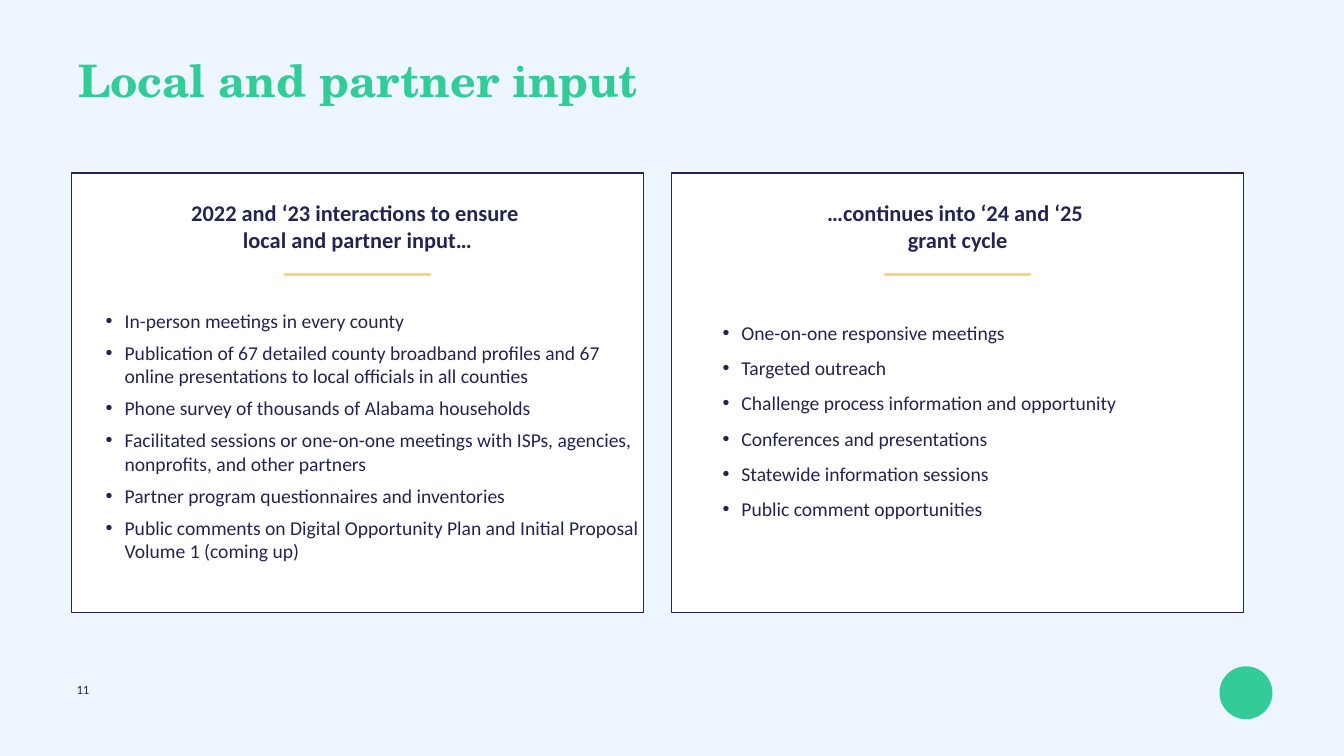
"""Build the local and partner input slide."""
from dataclasses import dataclass
from typing import Optional

from lxml.etree import SubElement
from pptx import Presentation
from pptx.dml.color import RGBColor
from pptx.enum.shapes import MSO_CONNECTOR as CONN, MSO_SHAPE as SHAPE
from pptx.enum.text import PP_ALIGN as ALIGN
from pptx.oxml.ns import qn
from pptx.util import Pt

NAVY, GREEN, GOLD, WHITE, PALE = "242451", "33CC99", "F8D57C", "FFFFFF", "EDF5FF"
PANEL_TOP, PANEL_W, PANEL_H = 246.96, 817.2, 627.84
RULE_Y, RULE_W = 392.4, 206.64
INDENT = 27


@dataclass
class Style:
    size: float
    color: str = NAVY
    font: str = "Calibri"
    bold: bool = False
    align: Optional[ALIGN] = None
    line_spacing: Optional[float] = None
    space_after: Optional[float] = None
    bullet: bool = False


@dataclass
class Panel:
    left: float
    heading: list[str]
    items: list[str]
    list_left: float
    list_w: float
    list_h: float
    list_style: Style


TITLE = Style(64, GREEN, "TeX Gyre Schola", bold=True, line_spacing=0.9)
NUMBER = Style(18, line_spacing=0.9)
HEADING = Style(32, bold=True, align=ALIGN.CENTER)

PANELS = [
    Panel(102.24, ["2022 and ‘23 interactions to ensure ", "local and partner input…"], [
        "In-person meetings in every county",
        "Publication of 67 detailed county broadband profiles and 67 online "
        "presentations to local officials in all counties",
        "Phone survey of thousands of Alabama households",
        "Facilitated sessions or one-on-one meetings with ISPs, agencies, "
        "nonprofits, and other partners",
        "Partner program questionnaires and inventories",
        "Public comments on Digital Opportunity Plan and Initial Proposal "
        "Volume 1 (coming up)",
    ], 144, 775.44, 419.04, Style(28, space_after=12, bullet=True)),
    Panel(959.76, ["…continues into ‘24 and ‘25 ", "grant cycle"], [
        "One-on-one responsive meetings",
        "Targeted outreach",
        "Challenge process information and opportunity",
        "Conferences and presentations",
        "Statewide information sessions",
        "Public comment opportunities",
    ], 1025.28, 712.08, 313.2, Style(28, line_spacing=1.5, bullet=True)),
]


def rgb(value: str) -> RGBColor:
    return RGBColor.from_string(value)


def add_block(slide, kind: SHAPE, x: float, y: float, w: float, h: float,
              fill: str, line: Optional[str] = None) -> None:
    sp = slide.shapes.add_shape(kind, Pt(x), Pt(y), Pt(w), Pt(h))
    sp.shadow.inherit = False
    sp.fill.solid()
    sp.fill.fore_color.rgb = rgb(fill)
    if line:
        sp.line.color.rgb = rgb(line)
        sp.line.width = Pt(2)
    else:
        sp.line.fill.background()


def add_bullet(p) -> None:
    pPr = p._p.get_or_add_pPr()
    pPr.set("marL", str(Pt(INDENT)))
    pPr.set("indent", str(-Pt(INDENT)))
    color = SubElement(pPr, qn("a:buClr"))
    SubElement(color, qn("a:srgbClr"), val=NAVY)
    SubElement(pPr, qn("a:buFont"), typeface="Arial")
    SubElement(pPr, qn("a:buChar"), char="•")


def add_text(slide, x: float, y: float, w: float, h: float,
             lines: list[str], style: Style) -> None:
    tf = slide.shapes.add_textbox(Pt(x), Pt(y), Pt(w), Pt(h)).text_frame
    tf.word_wrap = True
    for i, line in enumerate(lines):
        p = tf.add_paragraph() if i else tf.paragraphs[0]
        if style.bullet:
            add_bullet(p)
        p.alignment = style.align
        p.line_spacing = style.line_spacing
        if style.space_after is not None:
            p.space_after = Pt(style.space_after)
        r = p.add_run()
        r.text = line
        r.font.size = Pt(style.size)
        r.font.name = style.font
        r.font.bold = style.bold
        r.font.color.rgb = rgb(style.color)


def add_rule(slide, x: float, y: float, w: float) -> None:
    cxn = slide.shapes.add_connector(CONN.STRAIGHT, Pt(x), Pt(y), Pt(x + w), Pt(y))
    cxn.line.color.rgb = rgb(GOLD)
    cxn.line.width = Pt(5)
    cxn.line._get_or_add_ln().set("cap", "rnd")
    SubElement(cxn._element.spPr, qn("a:effectLst"))


def add_panel(slide, panel: Panel) -> None:
    add_block(slide, SHAPE.RECTANGLE, panel.left, PANEL_TOP, PANEL_W, PANEL_H, WHITE, NAVY)
    add_text(slide, panel.left, 280.8, PANEL_W, 123.12, panel.heading, HEADING)
    add_rule(slide, panel.left + (PANEL_W - RULE_W) / 2, RULE_Y, RULE_W)
    add_text(slide, panel.list_left, 437.76, panel.list_w, panel.list_h,
             panel.items, panel.list_style)


def main() -> None:
    prs = Presentation()
    prs.slide_width, prs.slide_height = Pt(1920.24), Pt(1080)
    slide = prs.slides.add_slide(prs.slide_layouts[6])
    slide.background.fill.solid()
    slide.background.fill.fore_color.rgb = rgb(PALE)
    add_block(slide, SHAPE.OVAL, 1742.4, 951.84, 75.6, 75.6, GREEN)
    for panel in PANELS:
        add_panel(slide, panel)
    add_text(slide, 102.24, 973.44, 1380.96, 26.64, ["11"], NUMBER)
    add_text(slide, 104.4, 79.92, 1710.72, 77.04, ["Local and partner input"], TITLE)
    prs.save("out.pptx")


if __name__ == "__main__":
    main()
